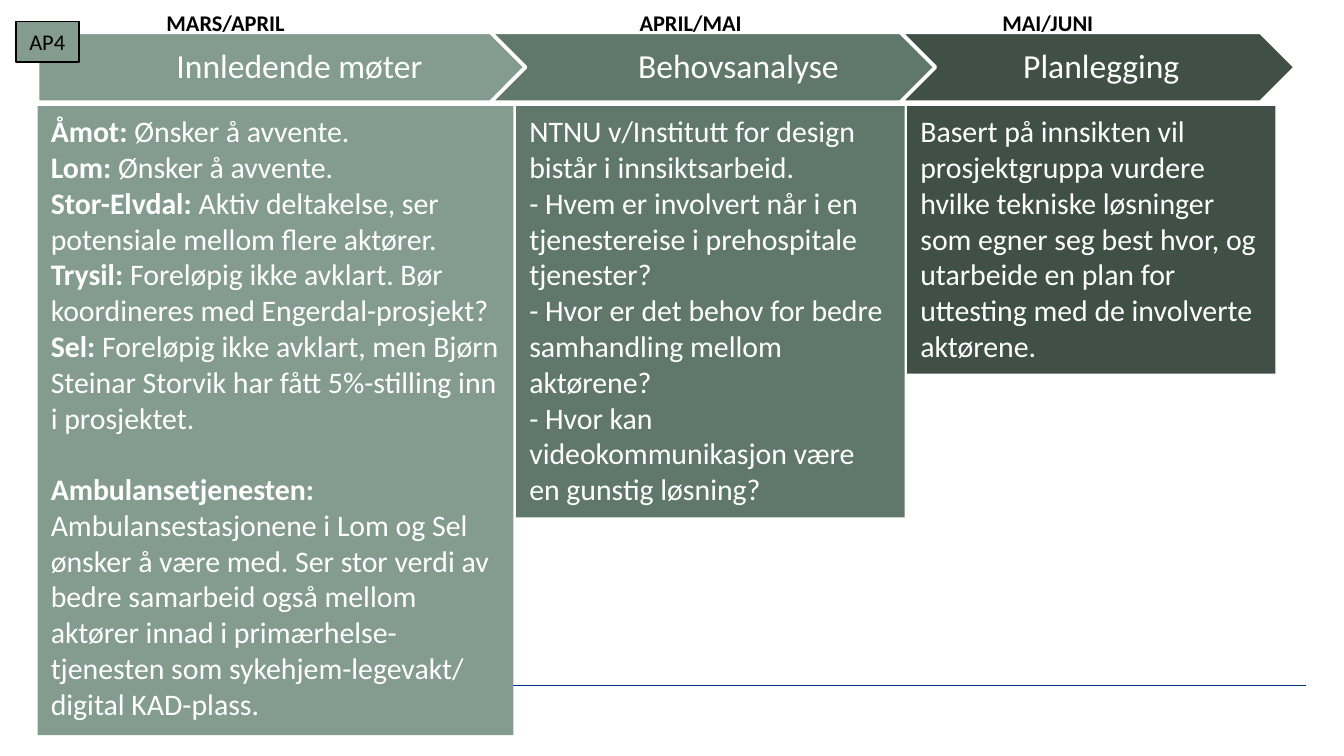
from dataclasses import dataclass

from lxml.etree import SubElement
from pptx import Presentation
from pptx.dml.color import RGBColor
from pptx.enum.shapes import MSO_CONNECTOR, MSO_SHAPE
from pptx.enum.text import MSO_ANCHOR as Anchor, MSO_AUTO_SIZE as AutoSize, PP_ALIGN as Align
from pptx.oxml.ns import qn
from pptx.util import Pt

PX = 9144  # EMU per px, 100 px to the inch
FONT = "Calibri"
COLORS = {
    "light": "839C8F", "medium": "60786B", "dark": "405047",
    "white": "FFFFFF", "black": "000000", "rule": "003283",
}
ARROW_TOP, ARROW_HEIGHT = 24, 52
PANEL_TOP = 79
MONTHS_LEFT, MONTHS_INSET = 114, 10


@dataclass
class Area:
    left: int
    top: int
    width: int
    height: int

    def emu(self) -> list[int]:
        return [value * PX for value in (self.left, self.top, self.width, self.height)]


@dataclass
class Line:
    text: str
    lead: str = ""  # bold opening words
    before: int = 0  # points of space above


@dataclass
class Phase:
    title: str
    month: str
    month_left: int
    color: str
    arrow_kind: MSO_SHAPE
    arrow_left: int
    arrow_width: int
    arrow_inset: int
    panel_left: int
    panel_width: int
    panel_height: int
    lines: list[Line]


PHASES = [
    Phase("Innledende møter", "MARS/APRIL", 124, "light", MSO_SHAPE.PENTAGON,
          28, 396, 10, 28, 354, 468, [
              Line("Ønsker å avvente.", "Åmot: "),
              Line("Ønsker å avvente.", "Lom: "),
              Line("Aktiv deltakelse, ser potensiale mellom flere aktører.", "Stor-Elvdal: "),
              Line("Foreløpig ikke avklart. Bør koordineres med Engerdal-prosjekt?", "Trysil: "),
              Line("Foreløpig ikke avklart, men Bjørn Steinar Storvik har fått "
                   "5%-stilling inn i prosjektet.", "Sel: "),
              Line(" Ambulansestasjonene i Lom og Sel ønsker å være med. Ser stor verdi av "
                   "bedre samarbeid også mellom aktører innad i primærhelse-tjenesten som "
                   "sykehjem-legevakt/ digital KAD-plass.", "Ambulansetjenesten:", 19),
          ]),
    Phase("Behovsanalyse", "APRIL/MAI", 476, "medium", MSO_SHAPE.CHEVRON,
          365, 364, 8, 384, 289, 306, [
              Line("NTNU v/Institutt for design bistår i innsiktsarbeid."),
              Line("- Hvem er involvert når i en tjenestereise i prehospitale tjenester?"),
              Line("- Hvor er det behov for bedre samhandling mellom aktørene?"),
              Line("- Hvor kan videokommunikasjon være en gunstig løsning?"),
          ]),
    Phase("Planlegging", "MAI/JUNI", 746, "dark", MSO_SHAPE.CHEVRON,
          670, 294, 8, 675, 274, 199, [
              Line("Basert på innsikten vil prosjektgruppa vurdere hvilke tekniske løsninger "
                   "som egner seg best hvor, og utarbeide en plan for uttesting med de "
                   "involverte aktørene."),
          ]),
]


def rgb(name: str) -> RGBColor:
    return RGBColor.from_string(COLORS[name])


def style(span, size: int, color: str, bold: bool = False) -> None:
    span.font.name = FONT
    span.font.size = Pt(size)
    span.font.bold = bold
    span.font.color.rgb = rgb(color)


def add_block(page, kind, area: Area, fill: str, line: str = "", weight: int = 0):
    block = page.shapes.add_shape(kind, *area.emu())
    block.shadow.inherit = False
    block.fill.solid()
    block.fill.fore_color.rgb = rgb(fill)
    if line:
        block.line.color.rgb = rgb(line)
        block.line.width = Pt(weight)
    else:
        block.line.fill.background()
    return block


def add_rule(page) -> None:
    rule = page.shapes.add_connector(
        MSO_CONNECTOR.STRAIGHT, 28 * PX, 510 * PX, 972 * PX, 510 * PX)
    rule.line.color.rgb = rgb("rule")
    rule.line.width = Pt(0.75)
    SubElement(rule._element.spPr, qn("a:effectLst"))


def add_arrow(page, phase: Phase) -> None:
    area = Area(phase.arrow_left, ARROW_TOP, phase.arrow_width, ARROW_HEIGHT)
    frame = add_block(page, phase.arrow_kind, area, phase.color, "white", 2).text_frame
    frame.margin_left, frame.margin_right = phase.arrow_inset * PX, 3 * PX
    frame.vertical_anchor = Anchor.MIDDLE
    frame.text = phase.title
    para = frame.paragraphs[0]
    para.alignment = Align.CENTER
    para.line_spacing = 0.9
    style(para.runs[0], 18, "white")


def add_panel(page, phase: Phase) -> None:
    area = Area(phase.panel_left, PANEL_TOP, phase.panel_width, phase.panel_height)
    frame = add_block(page, MSO_SHAPE.RECTANGLE, area, phase.color).text_frame
    frame.word_wrap = True
    frame.auto_size = AutoSize.SHAPE_TO_FIT_TEXT
    frame.vertical_anchor = Anchor.TOP
    for index, line in enumerate(phase.lines):
        para = frame.add_paragraph() if index else frame.paragraphs[0]
        para.alignment = Align.LEFT
        if line.before:
            para.space_before = Pt(line.before)
        for text, bold in ((line.lead, True), (line.text, False)):
            if text:
                span = para.add_run()
                span.text = text
                style(span, 16, "white", bold)


def add_badge(page) -> None:
    badge = add_block(page, MSO_SHAPE.RECTANGLE, Area(12, 16, 47, 30), "light", "black", 1)
    frame = badge.text_frame
    frame.word_wrap = False
    frame.auto_size = AutoSize.SHAPE_TO_FIT_TEXT
    frame.vertical_anchor = Anchor.TOP
    frame.text = "AP4"
    frame.paragraphs[0].alignment = Align.LEFT
    style(frame.paragraphs[0].runs[0], 12, "black")


def add_months(page) -> None:
    box = page.shapes.add_textbox(*Area(MONTHS_LEFT, 2, 823, 30).emu())
    frame = box.text_frame
    frame.word_wrap = True
    frame.auto_size = AutoSize.SHAPE_TO_FIT_TEXT
    frame.text = "\t".join(phase.month for phase in PHASES)
    para = frame.paragraphs[0]
    # One tab stop for each month after the first
    stops = SubElement(para._p.get_or_add_pPr(), qn("a:tabLst"))
    for phase in PHASES[1:]:
        offset = (phase.month_left - MONTHS_LEFT - MONTHS_INSET) * PX
        SubElement(stops, qn("a:tab"), pos=str(offset), algn="l")
    for span in para.runs:
        style(span, 12, "black", True)


def main() -> None:
    deck = Presentation()
    # Widescreen, 16:9
    deck.slide_width = 1000 * PX
    deck.slide_height = deck.slide_width * 9 // 16
    page = deck.slides.add_slide(deck.slide_layouts[6])

    # Footer rule, partly covered by the first panel
    add_rule(page)

    # Phases: descriptions below, arrows above
    for phase in PHASES:
        add_panel(page, phase)
    for phase in PHASES:
        add_arrow(page, phase)

    # Work package badge and timeline
    add_badge(page)
    add_months(page)

    deck.save("out.pptx")


if __name__ == "__main__":
    main()
